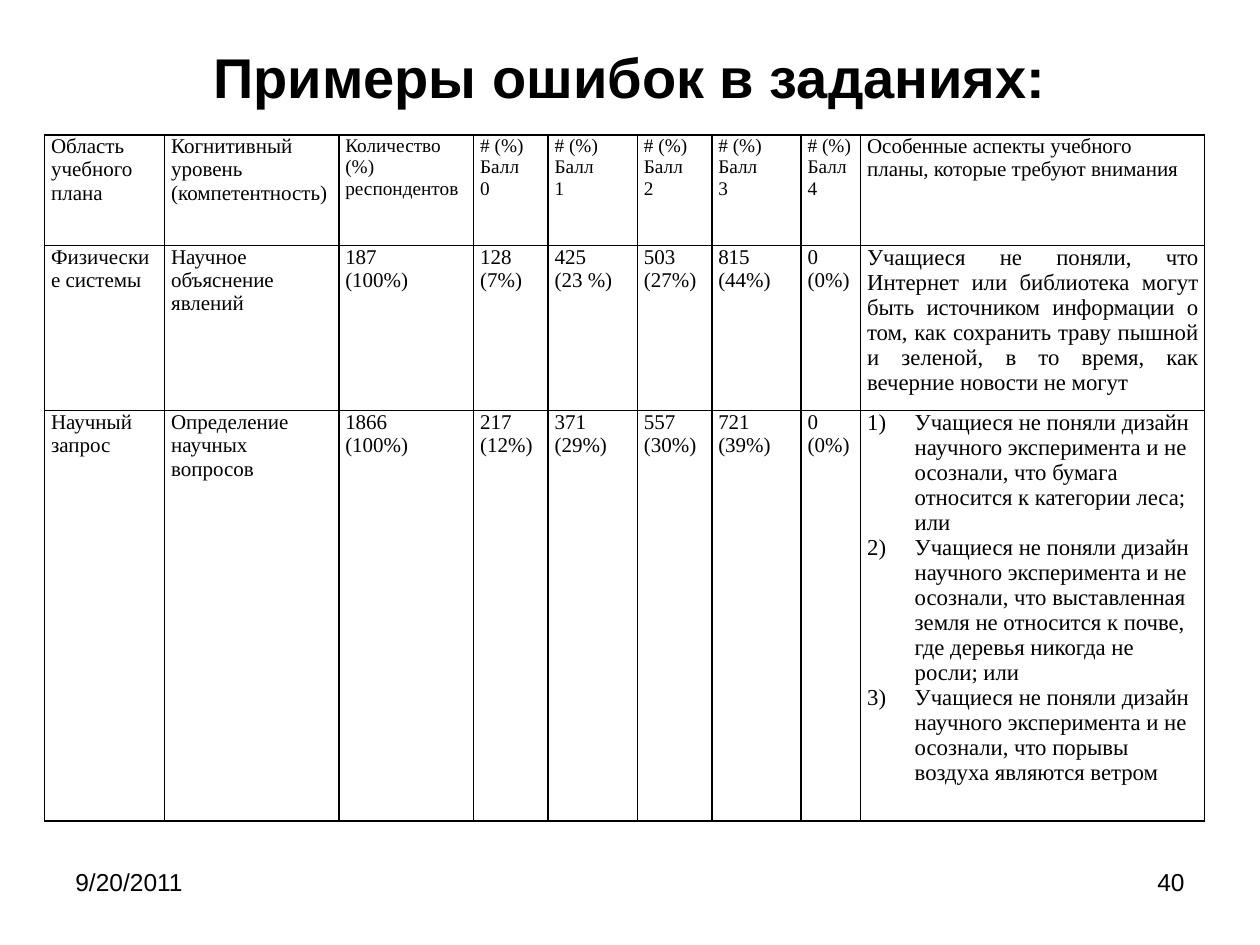
from lxml.etree import SubElement as Sub
from pptx import Presentation
from pptx.dml.color import RGBColor as Rgb
from pptx.enum.text import MSO_ANCHOR as Anchor, PP_ALIGN as Align
from pptx.oxml.ns import qn
from pptx.util import Cm, Pt

INK = "000000"
SERIF = "Times New Roman"
COLS = [2.42, 3.51, 2.72, 1.5, 1.8, 1.5, 1.8, 1.2, 6.93]
ROWS = [2.23, 3.33, 7.57]
ERROR = "Учащиеся не поняли дизайн научного эксперимента и не осознали, что "
HEAD = [
    "Область учебного плана",
    "Когнитивный уровень (компетентность)",
    "Количество (%) респондентов",
    *[f"# (%)\nБалл\n{mark}" for mark in range(5)],
    "Особенные аспекты учебного планы, которые требуют внимания",
]
BODY = [
    ["Физические системы", "Научное объяснение явлений",
     "187\n(100%)", "128\n(7%)", "425\n(23 %)", "503\n(27%)",
     "815\n(44%)", "0\n(0%)",
     "Учащиеся не поняли, что Интернет или библиотека могут быть "
     "источником информации о том, как сохранить траву пышной и зеленой, "
     "в то время, как вечерние новости не могут"],
    ["Научный запрос", "Определение научных вопросов",
     "1866\n(100%)", "217\n(12%)", "371\n(29%)", "557\n(30%)",
     "721\n(39%)", "0\n(0%)",
     "\n".join(ERROR + end for end in (
         "бумага относится к категории леса; или",
         "выставленная земля не относится к почве, где деревья никогда "
         "не росли; или",
         "порывы воздуха являются ветром"))],
]


def color(code):
    return Rgb.from_string(code)


def style(item, form):
    for name, value in form.items():
        setattr(item, name, value)


def write(frame, text, font, align=Align.LEFT, listed=False):
    frame.text = text
    for para in frame.paragraphs:
        para.alignment = align
        if listed:
            props = para._p.get_or_add_pPr()
            props.set("marL", str(Cm(0.96)))
            props.set("indent", str(-Cm(0.96)))
            Sub(props, qn("a:buFont"), typeface=SERIF)
            Sub(props, qn("a:buAutoNum"), type="arabicParenR")
        for run in para.runs:
            style(run.font, font)
            run.font.color.rgb = color(INK)


def label(slide, box, text, size, align, bold=False, anchor=Anchor.TOP):
    frame = slide.shapes.add_textbox(*map(Cm, box)).text_frame
    style(frame, {"word_wrap": True, "vertical_anchor": anchor})
    write(frame, text, {"name": "Arial", "size": Pt(size), "bold": bold}, align)


def border(cell):
    props = cell._tc.get_or_add_tcPr()
    for at, side in enumerate(("lnL", "lnR", "lnT", "lnB")):
        line = props.makeelement(qn(f"a:{side}"), {"w": str(Pt(1))})
        props.insert(at, line)
        fill = Sub(line, qn("a:solidFill"))
        Sub(fill, qn("a:srgbClr"), val=INK)


def grid(slide, left, top):
    data = [HEAD, *BODY]
    box = (left, top, sum(COLS), sum(ROWS))
    table = slide.shapes.add_table(len(ROWS), len(COLS), *map(Cm, box)).table
    style(table, {"first_row": False, "horz_banding": False})
    for col, width in zip(table.columns, COLS):
        col.width = Cm(width)
    for row, height in zip(table.rows, ROWS):
        row.height = Cm(height)
    pad = {"margin_left": Cm(0.13), "margin_right": Cm(0.13),
           "margin_top": 0, "margin_bottom": 0}
    last = len(COLS) - 1
    for y, texts in enumerate(data):
        for x, text in enumerate(texts):
            cell = table.cell(y, x)
            style(cell, pad)
            cell.fill.background()
            border(cell)
            size = 12
            if y == 0 and 2 <= x < last:
                size = 11
            elif y and x == last:
                size = 13
            align = Align.JUSTIFY if (y, x) == (1, last) else Align.LEFT
            write(cell.text_frame, text, {"name": SERIF, "size": Pt(size)},
                  align, (y, x) == (2, last))


def footer(slide, left, top, width):
    wide, high = 5.92, 1.32
    label(slide, (left, top, wide, high), "9/20/2011", 14, Align.LEFT)
    label(slide, (left + width - wide, top, wide, high), "40", 14, Align.RIGHT)


def main():
    deck = Presentation()
    style(deck, {"slide_width": Cm(25.4), "slide_height": Cm(19.05)})
    slide = deck.slides.add_slide(deck.slide_layouts[6])
    label(slide, (1.27, 0.53, 22.86, 2.01), "Примеры ошибок в заданиях:",
          32, Align.CENTER, True, Anchor.MIDDLE)
    grid(slide, 0.9, 2.72)
    footer(slide, 1.27, 17.35, 22.86)
    deck.save("out.pptx")


if __name__ == "__main__":
    main()
